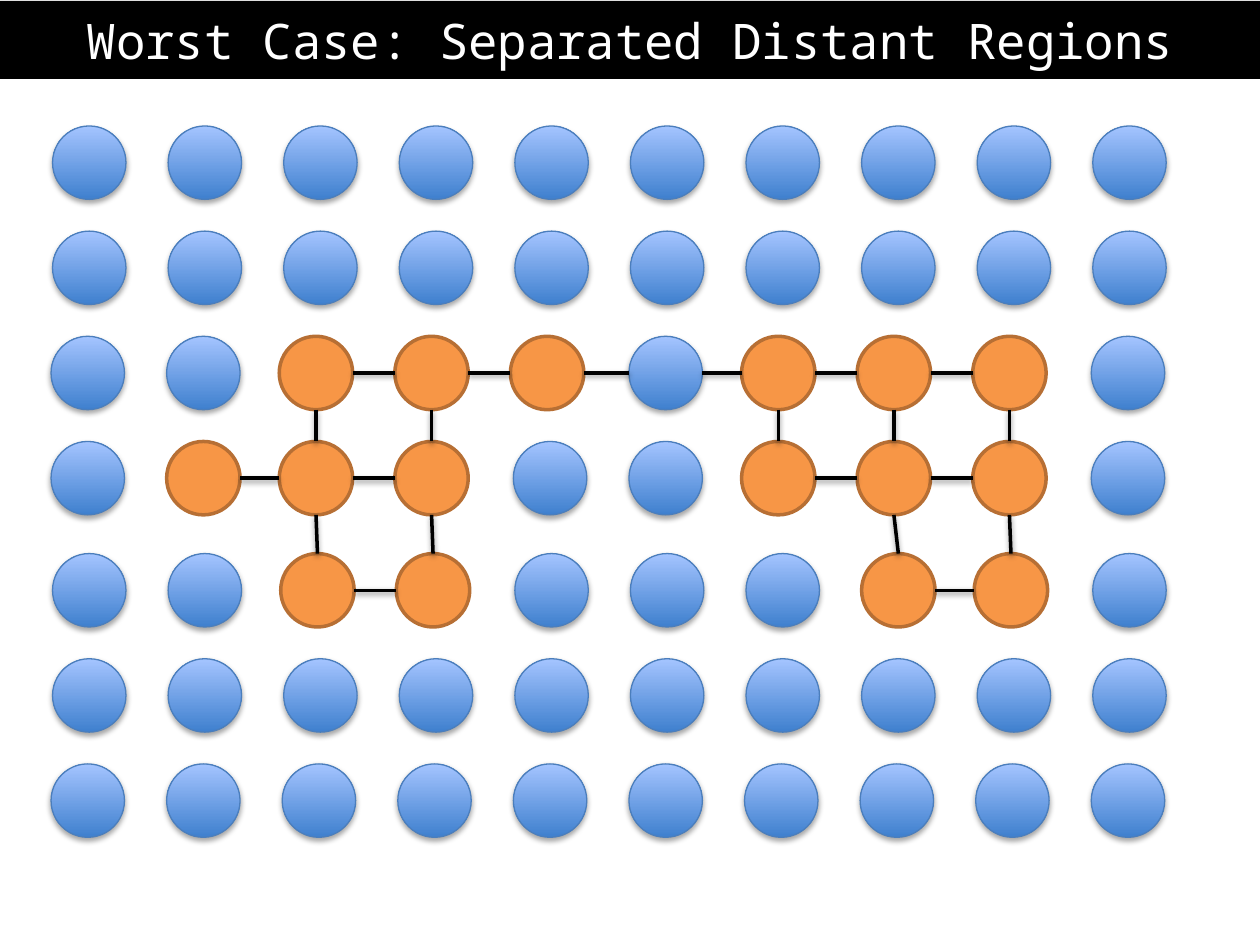
from lxml import etree
from pptx import Presentation
from pptx.dml.color import RGBColor
from pptx.enum.shapes import MSO_CONNECTOR, MSO_SHAPE
from pptx.enum.text import MSO_ANCHOR, PP_ALIGN
from pptx.oxml.ns import qn
from pptx.util import Cm, Pt

RECT, OVAL = MSO_SHAPE.RECTANGLE, MSO_SHAPE.OVAL
STRAIGHT = MSO_CONNECTOR.STRAIGHT
CENTER, MIDDLE = PP_ALIGN.CENTER, MSO_ANCHOR.MIDDLE

TITLE = "Worst Case: Separated Distant Regions"
# R = cell of a region, + = plain cell bridging the regions, . = plain cell
GRID = [
    "..........",
    "..........",
    "..RRR+RRR.",
    ".RRR..RRR.",
    "..RR...RR.",
    "..........",
    "..........",
]
LINKED = "R+"

THEME = {
    "font": "Noto Sans Mono",
    "title_size": Pt(28),
    "title_fill": RGBColor.from_string("000000"),
    "title_text": RGBColor.from_string("FFFFFF"),
    "plain_bottom": RGBColor.from_string("3F80CE"),
    "plain_top": RGBColor.from_string("A4C4FF"),
    "plain_line": RGBColor.from_string("4B7EBC"),
    "region_fill": RGBColor.from_string("F79646"),
    "region_line": RGBColor.from_string("B76F34"),
    "link": RGBColor.from_string("000000"),
    "thin": Pt(0.75),
    "thick": Pt(2),
    "cell_shadow": {"blur": Pt(3.1), "dist": Pt(1.8), "opacity": 35},
    "link_shadow": {"blur": Pt(3.1), "dist": Pt(1.6), "opacity": 38},
}

# All lengths in centimetres
SLIDE_W, SLIDE_H = 25.4, 19.05
TITLE_TOP, TITLE_H = 0.02, 1.57
LEFT, TOP = 1.06, 2.54
STEP_X, STEP_Y = 2.33, 2.12
DIAMETER = 1.48
LOWER_ROW, LOWER_GAP = 4, 0.14
ROW_SHIFT = {2: -0.03, 3: -0.03, 6: -0.03}
REGION_SHIFT = -0.06
UNSHIFTED = {(3, 1), (4, 7)}


def cell_origin(row, col):
    """Left and top of a cell; region cells sit slightly left of the grid."""
    x = LEFT + col * STEP_X + ROW_SHIFT.get(row, 0)
    if GRID[row][col] == "R" and (row, col) not in UNSHIFTED:
        x += REGION_SHIFT
    y = TOP + row * STEP_Y + (LOWER_GAP if row >= LOWER_ROW else 0)
    return x, y


def add_shadow(s, blur, dist, opacity):
    effects = etree.SubElement(s._element.spPr, qn("a:effectLst"))
    shadow = etree.SubElement(effects, qn("a:outerShdw"), blurRad=str(blur),
                              dist=str(dist), dir="5400000", rotWithShape="0")
    color = etree.SubElement(shadow, qn("a:srgbClr"), val="000000")
    etree.SubElement(color, qn("a:alpha"), val=str(opacity * 1000))


def add_title(slide):
    s = slide.shapes.add_shape(RECT, 0, Cm(TITLE_TOP), Cm(SLIDE_W), Cm(TITLE_H))
    s.shadow.inherit = False
    s.fill.solid()
    s.fill.fore_color.rgb = THEME["title_fill"]
    s.line.fill.background()
    tf = s.text_frame
    tf.word_wrap = True
    tf.vertical_anchor = MIDDLE
    p = tf.paragraphs[0]
    p.text = TITLE
    p.alignment = CENTER
    p.font.name = THEME["font"]
    p.font.size = THEME["title_size"]
    p.font.color.rgb = THEME["title_text"]


def add_cell(slide, row, col):
    x, y = cell_origin(row, col)
    s = slide.shapes.add_shape(OVAL, Cm(x), Cm(y), Cm(DIAMETER), Cm(DIAMETER))
    if GRID[row][col] == "R":
        s.fill.solid()
        s.fill.fore_color.rgb = THEME["region_fill"]
        s.line.color.rgb = THEME["region_line"]
        s.line.width = THEME["thick"]
        s.shadow.inherit = False
    else:
        s.fill.gradient()
        s.fill.gradient_angle = 90
        bottom, top = s.fill.gradient_stops
        bottom.position, top.position = 0, 1
        bottom.color.rgb = THEME["plain_bottom"]
        top.color.rgb = THEME["plain_top"]
        s.line.color.rgb = THEME["plain_line"]
        s.line.width = THEME["thin"]
        add_shadow(s, **THEME["cell_shadow"])


def add_link(slide, start, end):
    """Line between the facing edges of two neighbours, left-right or top-down."""
    (x1, y1), (x2, y2) = cell_origin(*start), cell_origin(*end)
    half = DIAMETER / 2
    if start[0] == end[0]:
        ends = x1 + DIAMETER, y1 + half, x2, y2 + half
    else:
        ends = x1 + half, y1 + DIAMETER, x2 + half, y2
    s = slide.shapes.add_connector(STRAIGHT, *map(Cm, ends))
    s.line.color.rgb = THEME["link"]
    s.line.width = THEME["thick"]
    add_shadow(s, **THEME["link_shadow"])


def main():
    prs = Presentation()
    prs.slide_width, prs.slide_height = Cm(SLIDE_W), Cm(SLIDE_H)
    slide = prs.slides.add_slide(prs.slide_layouts[6])
    add_title(slide)

    cells = [(r, c) for r, line in enumerate(GRID) for c in range(len(line))]
    for row, col in cells:
        add_cell(slide, row, col)

    linked = [(r, c) for r, c in cells if GRID[r][c] in LINKED]
    for row, col in linked:
        for neighbour in ((row, col + 1), (row + 1, col)):
            if neighbour in linked:
                add_link(slide, (row, col), neighbour)

    prs.save("out.pptx")


if __name__ == "__main__":
    main()
